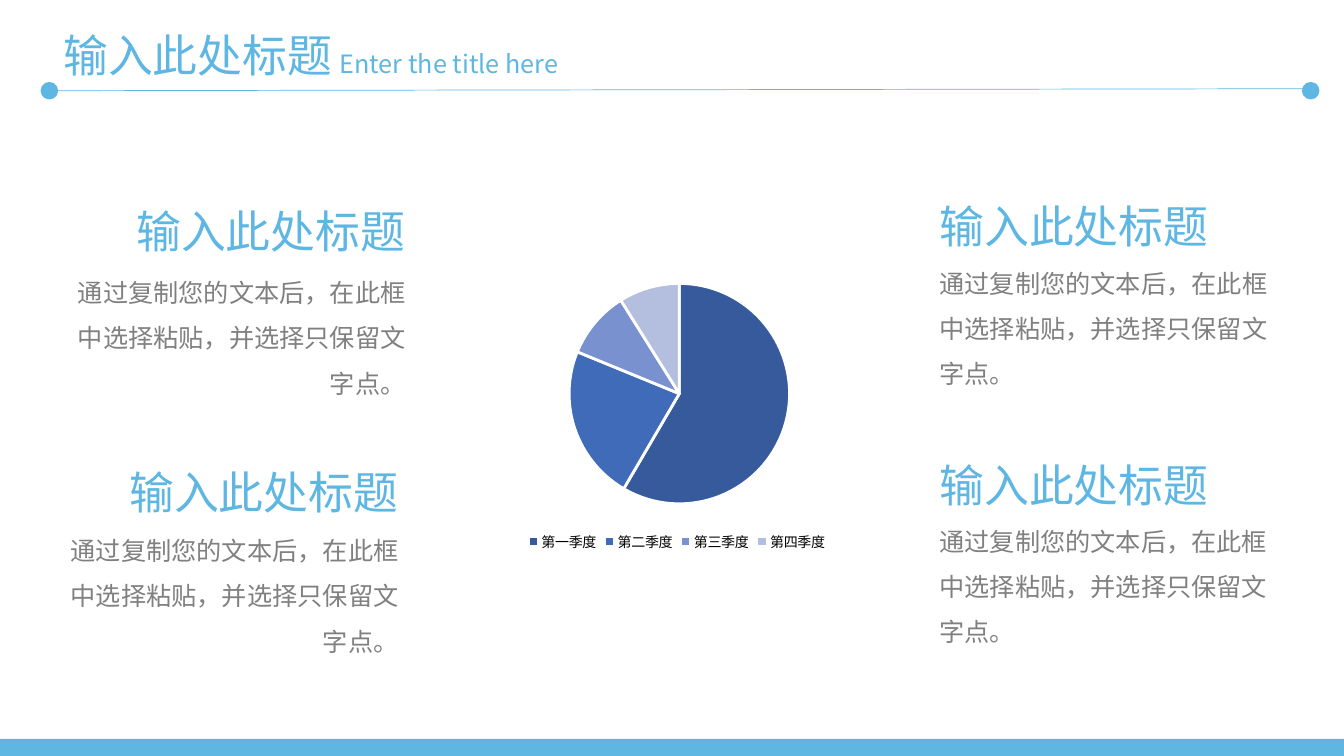
from lxml import etree
from pptx import Presentation
from pptx.chart.data import CategoryChartData
from pptx.dml.color import RGBColor
from pptx.enum.chart import XL_CHART_TYPE, XL_LEGEND_POSITION
from pptx.enum.shapes import MSO_CONNECTOR, MSO_SHAPE
from pptx.enum.text import MSO_AUTO_SIZE, PP_ALIGN
from pptx.oxml import parse_xml
from pptx.oxml.ns import nsdecls, qn
from pptx.util import Inches, Pt

PIE = XL_CHART_TYPE.PIE
BOTTOM = XL_LEGEND_POSITION.BOTTOM
STRAIGHT = MSO_CONNECTOR.STRAIGHT
RECTANGLE, OVAL = MSO_SHAPE.RECTANGLE, MSO_SHAPE.OVAL
GROW = MSO_AUTO_SIZE.SHAPE_TO_FIT_TEXT
LEFT, RIGHT = PP_ALIGN.LEFT, PP_ALIGN.RIGHT

TITLE = "输入此处标题"
BODY = "通过复制您的文本后，在此框中选择粘贴，并选择只保留文字点。"


def color(value):
    return RGBColor.from_string(value)


class Page:
    """Draws styled elements on one slide."""

    font = "Noto Sans CJK SC"
    accent = "5EB6E3"
    gray = "808080"

    def __init__(self, deck):
        self.slide = deck.slides.add_slide(deck.slide_layouts[6])

    def shape(self, kind, left, top, width, height, outlined=False):
        shape = self.slide.shapes.add_shape(
            kind, Inches(left), Inches(top), Inches(width), Inches(height))
        shape.shadow.inherit = False
        shape.fill.solid()
        shape.fill.fore_color.rgb = color(self.accent)
        if outlined:
            shape.line.color.rgb = color(self.accent)
            shape.line.width = Pt(1)
        else:
            shape.line.fill.background()

    def line(self, start, end):
        line = self.slide.shapes.add_connector(
            STRAIGHT, *(Inches(value) for value in start + end))
        line.line.color.rgb = color(self.accent)
        line.line.width = Pt(0.5)
        etree.SubElement(line._element.spPr, qn("a:effectLst"))

    def text(self, words, left, top, width, height, size, ink, align=LEFT, spacing=None):
        box = self.slide.shapes.add_textbox(
            Inches(left), Inches(top), Inches(width), Inches(height))
        frame = box.text_frame
        frame.word_wrap = True
        frame.auto_size = GROW
        para = frame.paragraphs[0]
        para.alignment = align
        para.line_spacing = spacing
        span = para.add_run()
        span.text = words
        span.font.size = Pt(size)
        span.font.name = self.font
        span.font.color.rgb = color(ink)
        east_asian = etree.SubElement(span.font._element, qn("a:ea"))
        east_asian.set("typeface", self.font)

    def heading(self, left, top, width=3.07, align=LEFT):
        self.text(TITLE, left, top, width, 0.64, 32, self.accent, align)

    def pie(self, left, top, width, height, slices, layout):
        data = CategoryChartData()
        data.categories = [name for name, _, _ in slices]
        data.add_series("Series 1", [value for _, value, _ in slices])
        chart = self.slide.shapes.add_chart(
            PIE, Inches(left), Inches(top), Inches(width), Inches(height), data).chart
        chart.has_title = False
        chart.font.size = Pt(10)
        chart.font.name = self.font
        chart.font.color.rgb = color("000000")
        east_asian = etree.SubElement(chart.font._element, qn("a:ea"))
        east_asian.set("typeface", self.font)
        chart.has_legend = True
        chart.legend.position = BOTTOM
        chart.legend.include_in_layout = False
        plot = chart.plots[0]
        plot.vary_by_categories = True
        for index, (_, _, fill) in enumerate(slices):
            style = plot.series[0].points[index].format
            style.fill.solid()
            style.fill.fore_color.rgb = color(fill)
            style.line.color.rgb = color("FFFFFF")
            style.line.width = Pt(2)
        area = chart._chartSpace.chart.plotArea
        for old in area.findall(qn("c:layout")):
            area.remove(old)
        values = "".join(f'<c:{key} val="{value}"/>' for key, value in layout.items())
        area.insert(0, parse_xml(
            f'<c:layout {nsdecls("c")}><c:manualLayout><c:layoutTarget val="inner"/>'
            f'<c:xMode val="edge"/><c:yMode val="edge"/>{values}'
            '</c:manualLayout></c:layout>'))


def main():
    deck = Presentation()
    deck.slide_width, deck.slide_height = Inches(13.33), Inches(7.5)
    page = Page(deck)
    page.shape(RECTANGLE, 0, 7.33, 13.33, 0.19)

    quarters = [("第一季度", 59, "365A9B"), ("第二季度", 23, "406BB8"),
                ("第三季度", 10, "7991CE"), ("第四季度", 9, "B4BEDF")]
    page.pie(4.38, 2.67, 4.67, 2.84, quarters, {"x": 0.27, "y": 0.05, "w": 0.47, "h": 0.77})

    heading_width = 3.07
    blocks = [(4.12, 1.97, 2.55, 3.55, RIGHT), (4.05, 4.56, 5.11, 3.64, RIGHT),
              (9.22, 1.92, 2.46, 3.55, LEFT), (9.22, 4.49, 5.02, 3.64, LEFT)]
    for edge, heading_top, body_top, body_width, align in blocks:
        shift = 1 if align == RIGHT else 0
        page.text(BODY, edge - shift * body_width, body_top, body_width, 1.46,
                  18, page.gray, align, 1.5)
        page.heading(edge - shift * heading_width, heading_top, heading_width, align)

    page.line((13.08, 0.88), (0.53, 0.9))
    for left in (0.41, 12.92):
        page.shape(OVAL, left, 0.82, 0.16, 0.16, outlined=True)
    page.heading(0.53, 0.23, 3.05)
    page.text("Enter the title here", 3.27, 0.43, 2.58, 0.4, 18, page.accent)
    deck.save("out.pptx")


if __name__ == "__main__":
    main()
